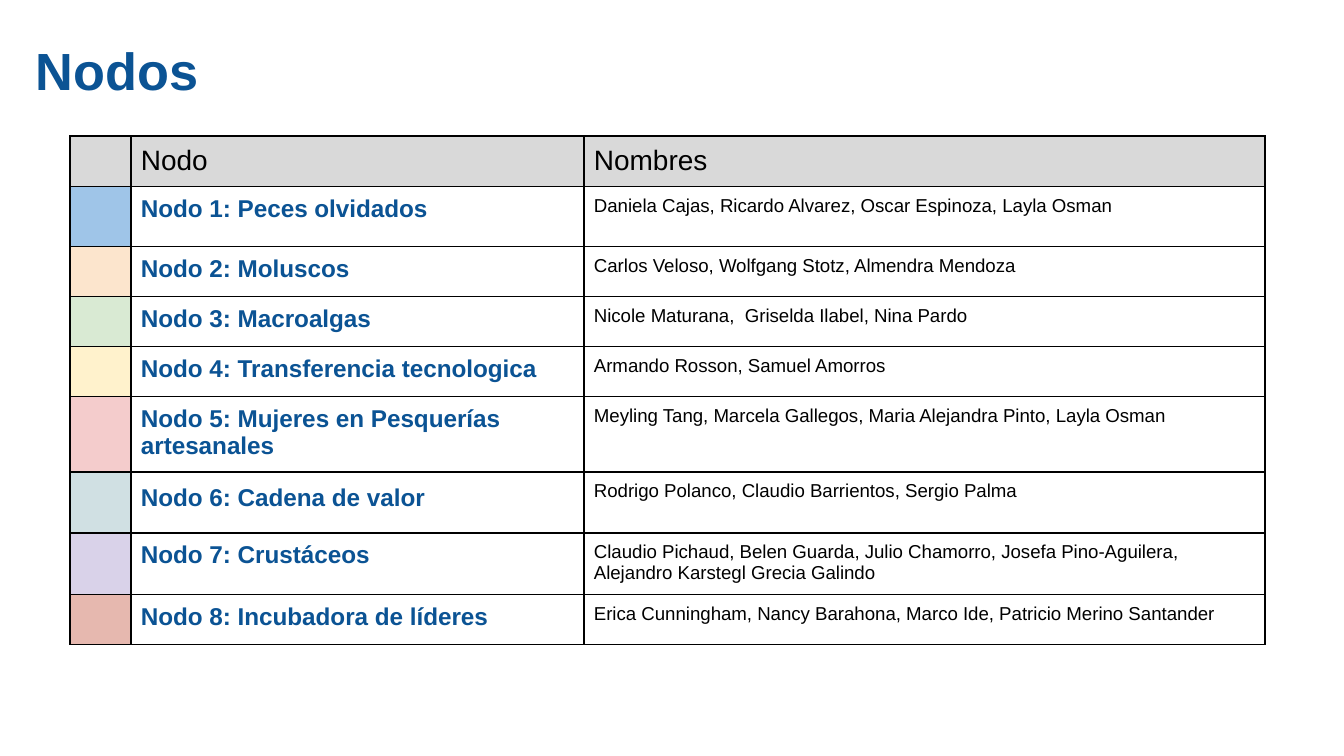
from lxml.etree import SubElement
from pptx import Presentation
from pptx.dml.color import RGBColor
from pptx.enum.text import MSO_ANCHOR
from pptx.oxml.ns import qn
from pptx.util import Pt

PX = 914400 / 134.4
BLUE, BLACK, GREY = "0B5394", "000000", "D9D9D9"


def px(n):
    return round(n * PX)


def add_run(p, text, size, color, bold=False):
    r = p.add_run()
    r.text = text
    fmt = {"name": "Arial", "size": Pt(size), "bold": bold}
    for key, value in fmt.items():
        setattr(r.font, key, value)
    r.font.color.rgb = RGBColor.from_string(color)


prs = Presentation()
prs.slide_width, prs.slide_height = px(1344), px(756)
s = prs.slides.add_slide(prs.slide_layouts[6])

# Title
title = s.shapes.add_textbox(px(23), px(19), px(1253), px(84))
tf = title.text_frame
title_format = {
    "word_wrap": True, "vertical_anchor": MSO_ANCHOR.TOP,
    "margin_left": px(13), "margin_right": px(13),
    "margin_top": px(19), "margin_bottom": 0,
}
for key, value in title_format.items():
    setattr(tf, key, value)
add_run(tf.paragraphs[0], "Nodos", 28, BLUE, True)

# Table: key colour, node, names, row height
rows = [
    (GREY, "Nodo", "Nombres", 50),
    ("9FC5E8", "Nodo 1: Peces olvidados",
     "Daniela Cajas, Ricardo Alvarez, Oscar Espinoza, Layla Osman", 60),
    ("FCE5CD", "Nodo 2: Moluscos",
     "Carlos Veloso, Wolfgang Stotz, Almendra Mendoza", 50),
    ("D9EAD3", "Nodo 3: Macroalgas",
     "Nicole Maturana,  Griselda Ilabel, Nina Pardo", 50),
    ("FFF2CC", "Nodo 4: Transferencia tecnologica",
     "Armando Rosson, Samuel Amorros", 50),
    ("F4CCCC", "Nodo 5: Mujeres en Pesquerías artesanales",
     "Meyling Tang, Marcela Gallegos, Maria Alejandra Pinto, Layla Osman", 73),
    ("D0E0E3", "Nodo 6: Cadena de valor",
     "Rodrigo Polanco, Claudio Barrientos, Sergio Palma", 61),
    ("D9D2E9", "Nodo 7: Crustáceos",
     "Claudio Pichaud, Belen Guarda, Julio Chamorro, Josefa Pino-Aguilera, "
     "Alejandro Karstegl Grecia Galindo", 60),
    ("E6B8AF", "Nodo 8: Incubadora de líderes",
     "Erica Cunningham, Nancy Barahona, Marco Ide, Patricio Merino Santander", 50),
]
widths = [61, 453, 681]
height = sum(row[3] for row in rows)
table = s.shapes.add_table(len(rows), len(widths), px(70), px(136),
                           px(sum(widths)), px(height)).table
table.first_row = table.horz_banding = False
for column, width in zip(table.columns, widths):
    column.width = px(width)

cell_margins = {"margin_left": px(10), "margin_right": px(10),
                "margin_top": px(9), "margin_bottom": px(8)}
for i, (color, node, names, row_height) in enumerate(rows):
    table.rows[i].height = px(row_height)
    for j, text in enumerate(["", node, names]):
        cell = table.cell(i, j)
        for key, value in cell_margins.items():
            setattr(cell, key, value)

        p = cell.text_frame.paragraphs[0]
        if j == 0:
            SubElement(p._p, qn("a:endParaRPr"), sz="1000")
        elif i == 0:
            add_run(p, text, 15, BLACK)
        elif j == 1:
            add_run(p, text, 13, BLUE, True)
        else:
            add_run(p, text, 10, BLACK)
        if node.startswith("Nodo 6") and j == 1:
            p.line_spacing = 1.15

        tcPr = cell._tc.get_or_add_tcPr()
        for side in ("lnL", "lnR", "lnT", "lnB"):
            ln = SubElement(tcPr, qn(f"a:{side}"), w=str(Pt(1)))
            fill = SubElement(ln, qn("a:solidFill"))
            SubElement(fill, qn("a:srgbClr"), val=BLACK)
        if i == 0 or j == 0:
            cell.fill.solid()
            cell.fill.fore_color.rgb = RGBColor.from_string(color)
        else:
            cell.fill.background()

prs.save("out.pptx")
